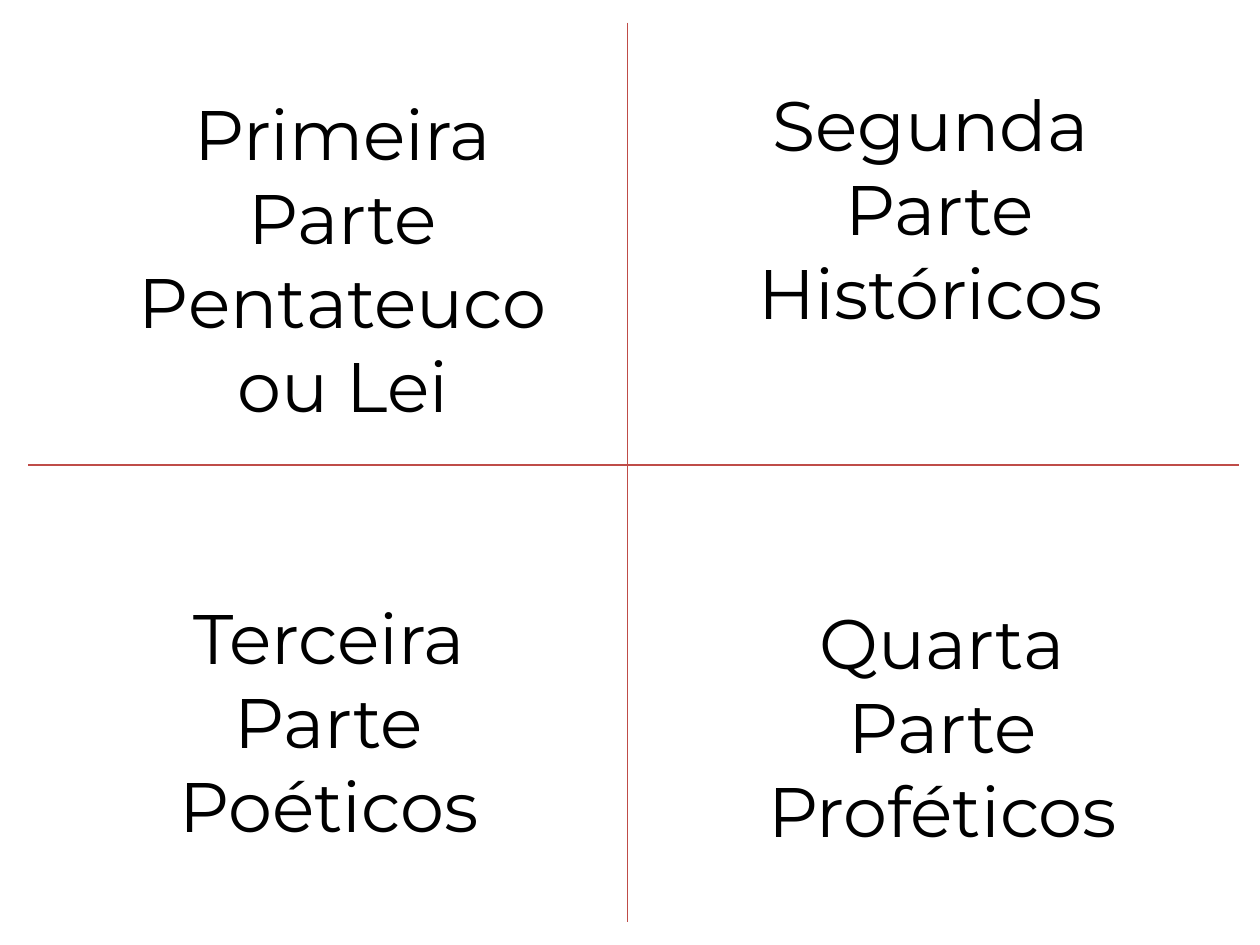
from pptx import Presentation
from pptx.dml.color import RGBColor
from pptx.enum import shapes, text
from pptx.oxml.ns import qn
from pptx.util import Inches, Pt
from lxml import etree

RED = RGBColor(0xBF, 0x4C, 0x48)
BLACK = RGBColor(0, 0, 0)
BLANK_LAYOUT = 6

DIVIDERS = [
    (4.98, 0.18, 4.98, 7.32),
    (9.83, 3.69, 0.22, 3.69),
]
PARTS = [
    ((0.75, 0.67, 3.94, 2.77), ["Primeira Parte", "Pentateuco ou Lei"]),
    ((5.71, 0.6, 3.35, 2.12), ["Segunda", " Parte", "Históricos"]),
    ((1.02, 4.67, 3.18, 2.12), ["Terceira", "Parte", "Poéticos"]),
    ((4.98, 4.71, 5, 2.12), ["Quarta", "Parte", "Proféticos"]),
]


def add_divider(slide, ends):
    """Draw one arm of the cross that splits the slide."""
    divider = slide.shapes.add_connector(
        shapes.MSO_CONNECTOR.STRAIGHT, *map(Inches, ends))
    divider.line.color.rgb = RED
    divider.line.width = Pt(0.75)
    etree.SubElement(divider._element.spPr, qn("a:effectLst"))


def add_part(slide, box, lines):
    """Write the centred name of one part of the books in its quadrant."""
    frame = slide.shapes.add_textbox(*map(Inches, box)).text_frame
    frame.word_wrap = True
    frame.auto_size = text.MSO_AUTO_SIZE.SHAPE_TO_FIT_TEXT
    for index, line in enumerate(lines):
        paragraph = frame.add_paragraph() if index else frame.paragraphs[0]
        paragraph.alignment = text.PP_ALIGN.CENTER
        run = paragraph.add_run()
        run.text = line
        run.font.name = "Montserrat"
        run.font.size = Pt(40)
        run.font.color.rgb = BLACK


def main():
    """Build and save the slide of the four parts."""
    deck = Presentation()
    deck.slide_width, deck.slide_height = Inches(10), Inches(7.5)
    slide = deck.slides.add_slide(deck.slide_layouts[BLANK_LAYOUT])
    for ends in DIVIDERS:
        add_divider(slide, ends)
    for box, lines in PARTS:
        add_part(slide, box, lines)
    deck.save("out.pptx")


if __name__ == "__main__":
    main()
